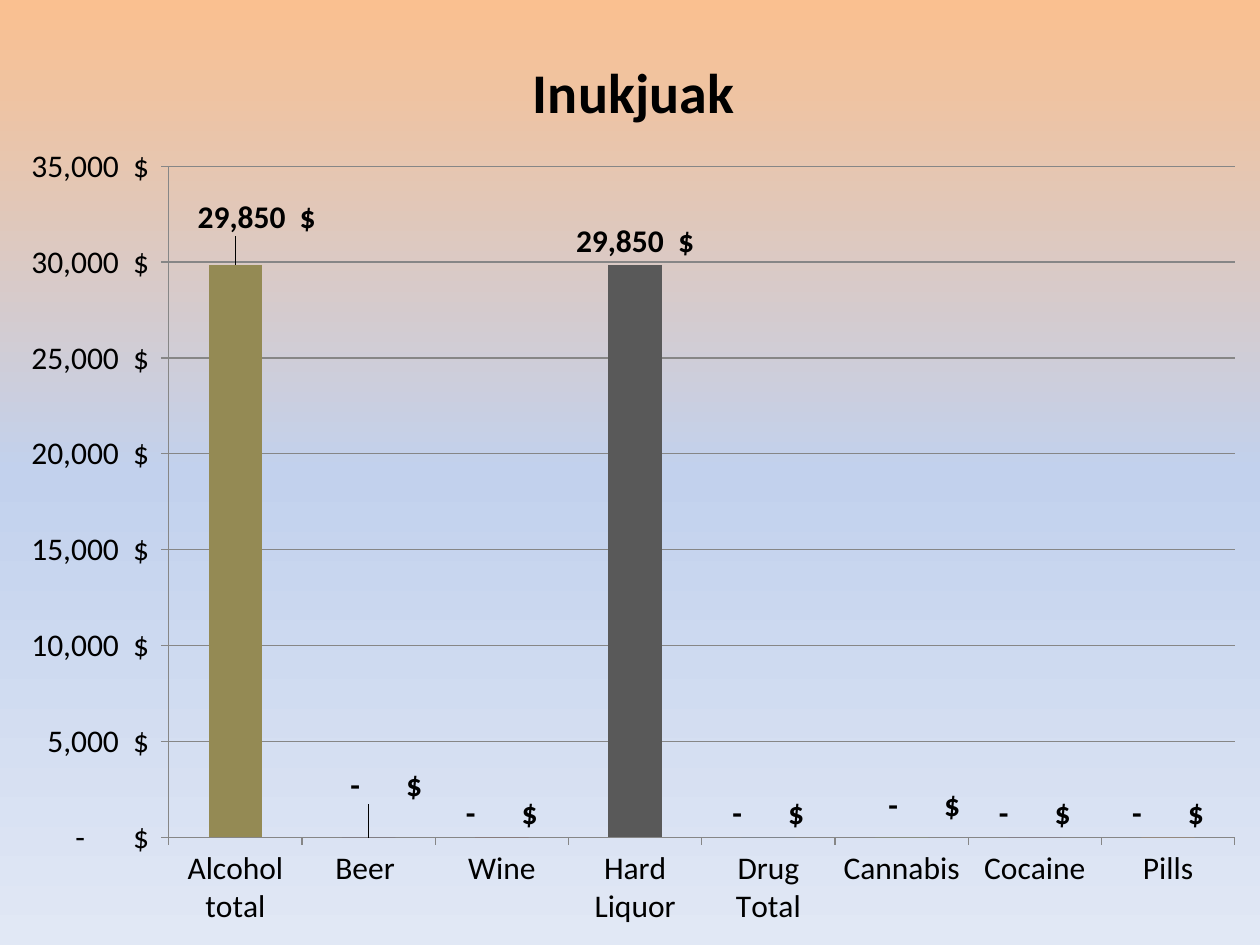
from copy import deepcopy
from pptx import Presentation
from pptx.chart.data import CategoryChartData
from pptx.dml.color import RGBColor
from pptx.enum.chart import XL_CHART_TYPE, XL_LABEL_POSITION, XL_TICK_MARK
from pptx.oxml import parse_xml
from pptx.oxml.ns import nsdecls, qn
from pptx.util import Inches, Pt

BLACK = RGBColor(0x00, 0x00, 0x00)
GRAY = RGBColor(0x86, 0x86, 0x86)
BLUE = RGBColor(0x4F, 0x81, 0xBD)
SKY = [(0, RGBColor(0xFA, 0xC0, 0x90)),
       (0.5, RGBColor(0xC2, 0xD1, 0xED)),
       (1, RGBColor(0xE1, 0xE8, 0xF5))]
DOLLARS = r'_ * #,##0_)\ "$"_ ;_ * \(#,##0\)\ "$"_ ;_ * "-"??_)\ "$"_ ;_ @_ '
SEIZURES = [
    ("Alcohol total", 29850, RGBColor(0x94, 0x8A, 0x54)),
    ("Beer ", 0, RGBColor(0x60, 0x4A, 0x7B)),
    ("Wine", 0, RGBColor(0x95, 0x37, 0x35)),
    ("Hard Liquor", 29850, RGBColor(0x59, 0x59, 0x59)),
    ("Drug Total", 0, BLUE),
    ("Cannabis", 0, RGBColor(0x9B, 0xBB, 0x59)),
    ("Cocaine", 0, RGBColor(0x80, 0x64, 0xA2)),
    ("Pills", 0, RGBColor(0xF7, 0x96, 0x46)),
]
LABEL_SHIFTS = {0: (0.017, -0.025), 1: (0.014, -0.029), 5: (0.018, -0.008)}


def manual_layout(head="", **shares):
    body = "".join(f'<c:{k} val="{v}"/>' for k, v in shares.items())
    return parse_xml(f'<c:layout {nsdecls("c")}><c:manualLayout>{head}{body}'
                     '</c:manualLayout></c:layout>')


def style_font(font, size, bold=False):
    font.name = "Calibri"
    font.size = Pt(size)
    font.bold = bold
    font.color.rgb = BLACK


prs = Presentation()
prs.slide_width, prs.slide_height = Inches(10), Inches(7.5)
s = prs.slides.add_slide(prs.slide_layouts[6])

fill = s.background.fill
fill.gradient()
fill.gradient_angle = 270
stop_list = s._element.find(".//" + qn("a:gsLst"))
stop_list.append(deepcopy(stop_list[0]))
for stop, (position, color) in zip(fill.gradient_stops, SKY):
    stop.position = position
    stop.color.rgb = color

data = CategoryChartData(number_format=DOLLARS)
data.categories = [name for name, value, color in SEIZURES]
data.add_series("Inukjuak", [value for name, value, color in SEIZURES])
chart = s.shapes.add_chart(XL_CHART_TYPE.COLUMN_CLUSTERED, 0, 0,
                           prs.slide_width, prs.slide_height, data).chart
style_font(chart.font, 18)
chart.has_legend = False

tf = chart.chart_title.text_frame
tf.text = "Inukjuak"
style_font(tf.paragraphs[0].font, 32, True)
chart.chart_title.include_in_layout = False
title = chart.chart_title._element
for old in title.findall(qn("c:layout")):
    title.remove(old)
title.find(qn("c:tx")).addnext(manual_layout(
    '<c:xMode val="edge"/><c:yMode val="edge"/>', x=0.415, y=0.045))

plot_area = chart._chartSpace.find(".//" + qn("c:plotArea"))
for old in plot_area.findall(qn("c:layout")):
    plot_area.remove(old)
plot_area.insert(0, manual_layout(
    '<c:layoutTarget val="inner"/><c:xMode val="edge"/><c:yMode val="edge"/>',
    x=0.134, y=0.176, w=0.846, h=0.71))

for axis in (chart.category_axis, chart.value_axis):
    axis.major_tick_mark = XL_TICK_MARK.OUTSIDE
    axis.minor_tick_mark = XL_TICK_MARK.NONE
    axis.format.line.color.rgb = GRAY
    axis.format.line.width = Pt(0.75)
    style_font(axis.tick_labels.font, 18)

values = chart.value_axis
values.minimum_scale, values.maximum_scale, values.major_unit = 0, 35000, 5000
values.has_major_gridlines = True
values.major_gridlines.format.line.color.rgb = GRAY
values.major_gridlines.format.line.width = Pt(0.75)
values.tick_labels.number_format = DOLLARS
values.tick_labels.number_format_is_linked = False

plot = chart.plots[0]
plot.gap_width = 150
plot.vary_by_categories = False
series = plot.series[0]
series.invert_if_negative = False
series.format.fill.solid()
series.format.fill.fore_color.rgb = BLUE
for i, (name, value, color) in enumerate(SEIZURES):
    point_fill = series.points[i].format.fill
    point_fill.solid()
    point_fill.fore_color.rgb = color

labels = series.data_labels
labels.show_value = True
labels.number_format = DOLLARS
labels.number_format_is_linked = False
labels.position = XL_LABEL_POSITION.OUTSIDE_END
style_font(labels.font, 18, True)
number_format = labels._element.find(qn("c:numFmt"))
for i, (dx, dy) in LABEL_SHIFTS.items():
    label = series.points[i].data_label
    label.position = XL_LABEL_POSITION.OUTSIDE_END
    style_font(label.font, 18, True)
    index = labels._element.findall(qn("c:dLbl"))[-1].find(qn("c:idx"))
    index.addnext(deepcopy(number_format))
    index.addnext(manual_layout(x=dx, y=dy))

prs.save("out.pptx")
